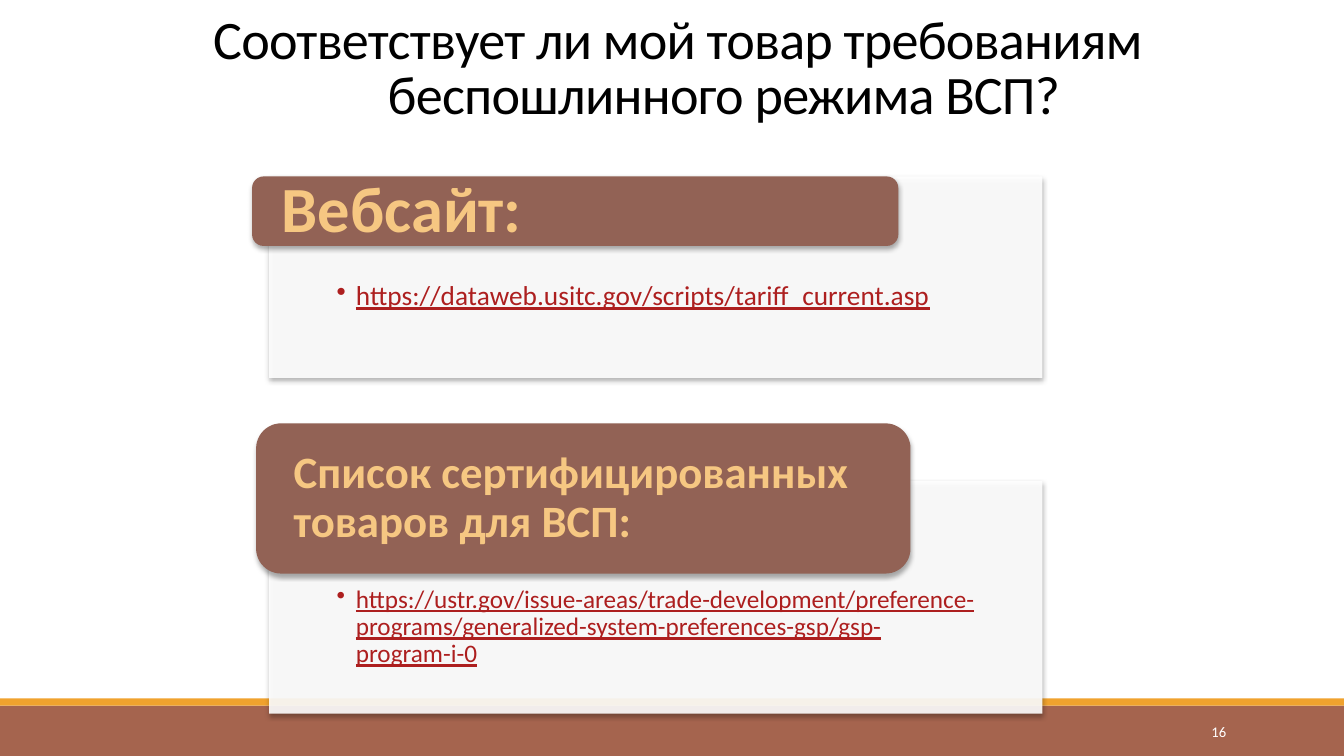
from dataclasses import dataclass

from lxml.etree import SubElement
from pptx import Presentation
from pptx.dml.color import RGBColor
from pptx.enum.shapes import MSO_SHAPE
from pptx.enum.text import MSO_ANCHOR, PP_ALIGN
from pptx.oxml.ns import qn
from pptx.util import Inches, Pt

COLORS = {
    "black": "000000",
    "white": "FFFFFF",
    "footer": "A5644E",
    "stripe": "F0A22E",
    "tab": "926255",
    "tab_text": "F6C782",
    "link": "AD1F1F",
}
Box = tuple[float, float, float, float]


@dataclass
class Section:
    heading: str
    heading_size: float
    tab: Box
    tab_inset: float
    url: str
    url_size: float
    panel: Box


SECTIONS = [
    Section("Вебсайт:", 46, (2.5, 1.75, 6.41, 0.69), 0.26,
            "https://dataweb.usitc.gov/scripts/tariff_current.asp", 19.5,
            (2.67, 1.75, 7.67, 2)),
    Section("Список сертифицированных товаров для ВСП:", 32,
            (2.54, 4.2, 6.49, 1.49), 0.3,
            "https://ustr.gov/issue-areas/trade-development/"
            "preference-programs/generalized-system-preferences-gsp/"
            "gsp-program-i-0", 18,
            (2.67, 4.77, 7.67, 2.31)),
]


def rgb(name: str) -> RGBColor:
    return RGBColor.from_string(COLORS[name])


def add_block(s, kind, box: Box, color: str):
    sp = s.shapes.add_shape(kind, *map(Inches, box))
    sp.shadow.inherit = False
    sp.fill.solid()
    sp.fill.fore_color.rgb = rgb(color)
    sp.line.fill.background()
    return sp


def add_shadow(sp) -> None:
    effects = sp._element.spPr.find(qn("a:effectLst"))
    shadow = SubElement(effects, qn("a:outerShdw"), blurRad=str(Pt(3.5)),
                        dist=str(Pt(2.2)), dir="5400000", rotWithShape="0")
    color = SubElement(shadow, qn("a:srgbClr"), val=COLORS["black"])
    SubElement(color, qn("a:alpha"), val="32000")


def set_opacity(sp, percent: int) -> None:
    color = sp._element.spPr.find(qn("a:solidFill"))[0]
    SubElement(color, qn("a:alpha"), val=str(percent * 1000))


def write(sp, text: str, color: str, font: dict, insets: Box,
          anchor=MSO_ANCHOR.MIDDLE, align=PP_ALIGN.LEFT, spacing=0.9):
    """Fill a shape with one paragraph; insets are left, top, right, bottom."""
    tf = sp.text_frame
    tf.word_wrap = True
    tf.vertical_anchor = anchor
    for side, inset in zip(("left", "top", "right", "bottom"), insets):
        setattr(tf, f"margin_{side}", Inches(inset))
    p = tf.paragraphs[0]
    p.alignment = align
    p.line_spacing = spacing
    r = p.add_run()
    r.text = text
    r.font.color.rgb = rgb(color)
    for name, value in ({"name": "Calibri"} | font).items():
        setattr(r.font, name, value)
    return p


def hang(p, indent: float) -> None:
    pPr = p._p.get_or_add_pPr()
    pPr.set("marL", str(Inches(indent)))
    pPr.set("indent", str(-Inches(indent)))


def add_section(s, section: Section) -> None:
    # Panel with the bulleted address
    panel = add_block(s, MSO_SHAPE.RECTANGLE, section.panel, "white")
    set_opacity(panel, 90)
    add_shadow(panel)
    p = write(panel, section.url, "link",
              {"size": Pt(section.url_size), "underline": True},
              (0.67, 1.05, 0.67, 0.15), MSO_ANCHOR.TOP)
    hang(p, 0.19)
    SubElement(p._p.get_or_add_pPr(), qn("a:buChar"), char="•")

    # Heading tab
    tab = add_block(s, MSO_SHAPE.ROUNDED_RECTANGLE, section.tab, "tab")
    add_shadow(tab)
    write(tab, section.heading, "tab_text",
          {"size": Pt(section.heading_size), "bold": True},
          (section.tab_inset, 0, section.tab_inset, 0))


def main() -> None:
    prs = Presentation()
    prs.slide_width, prs.slide_height = Inches(13.33), Inches(7.5)
    s = prs.slides.add_slide(prs.slide_layouts[6])

    # Footer bands and slide number
    add_block(s, MSO_SHAPE.RECTANGLE, (0, 7, 13.33, 0.5), "footer")
    add_block(s, MSO_SHAPE.RECTANGLE, (0, 6.93, 13.33, 0.07), "stripe")
    number = s.shapes.add_textbox(*map(Inches, (10.83, 7.06, 1.43, 0.4)))
    write(number, "16", "white", {"size": Pt(10.5)}, (0.1, 0.05, 0.1, 0.05),
          align=PP_ALIGN.RIGHT, spacing=1.0)

    # Title
    title = s.shapes.add_textbox(*map(Inches, (1.72, 0.2, 10, 1.66)))
    p = write(title,
              "Соответствует ли мой товар требованиям "
              "беспошлинного режима ВСП?",
              "black", {"size": Pt(38.7)}, (0.1, 0.05, 0.1, 0.61),
              MSO_ANCHOR.BOTTOM, PP_ALIGN.CENTER, 0.85)
    hang(p, 0.92)
    p.runs[0].font._element.set("spc", "-50")

    # Sections
    for section in SECTIONS:
        add_section(s, section)

    prs.save("out.pptx")


if __name__ == "__main__":
    main()
